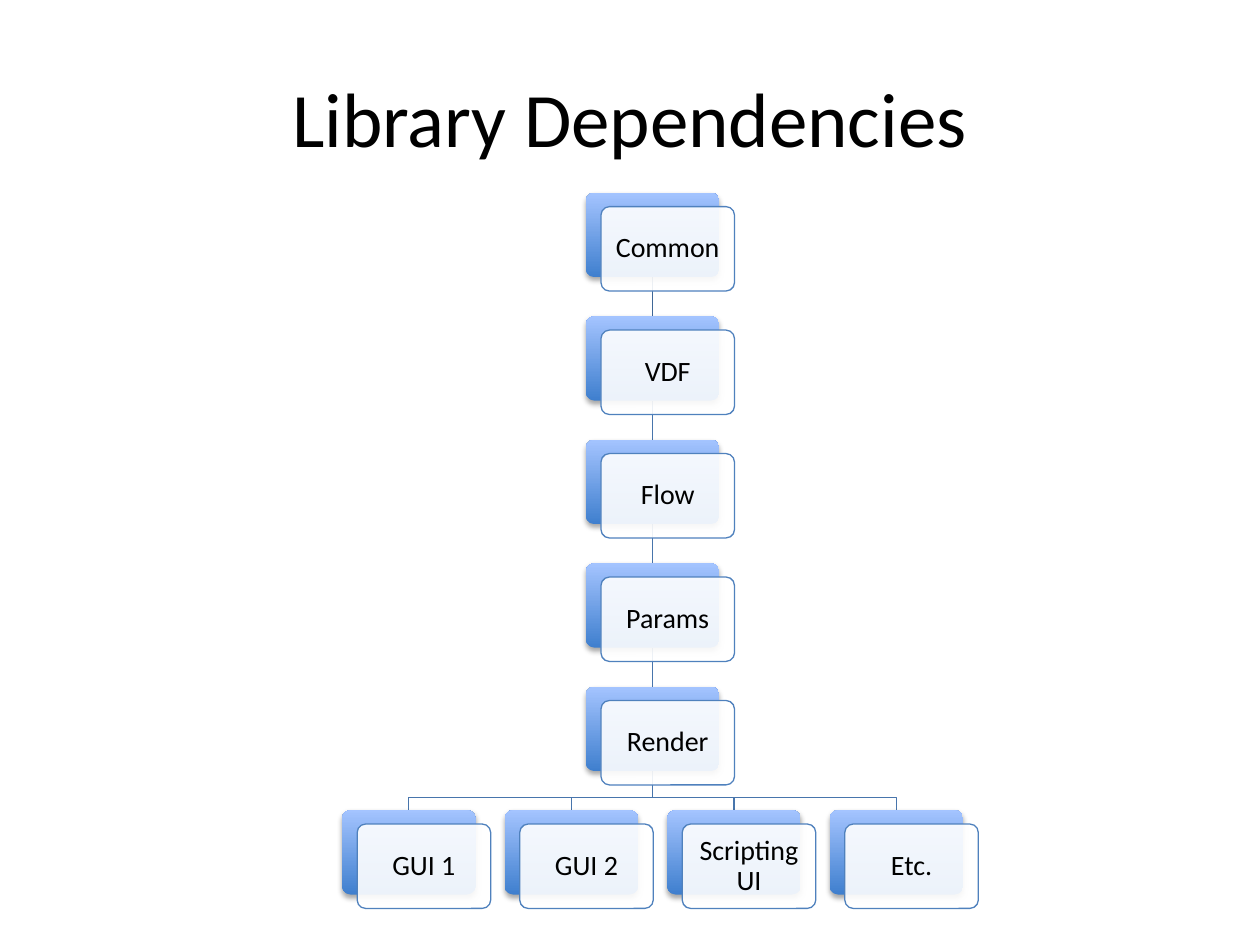
"""Build the library dependency tree slide."""
from lxml.etree import SubElement
from pptx import Presentation
from pptx.dml.color import RGBColor
from pptx.enum.shapes import MSO_CONNECTOR, MSO_SHAPE
from pptx.enum.text import MSO_ANCHOR, PP_ALIGN
from pptx.oxml.ns import qn
from pptx.util import Inches, Pt

CHAIN = ["Common", "VDF", "Flow", "Params", "Render"]
LEAVES = ["GUI 1", "GUI 2", "Scripting UI", "Etc."]
TRUNK_X, TOP = 5.18, 1.53
ROW_PITCH, LEAF_PITCH = 0.98, 1.29
CARD_W, CARD_H = 1.06, 0.67
OFFSET_X, OFFSET_Y = 0.12, 0.11


def color(hex_code):
    return RGBColor.from_string(hex_code)


def apply(target, formats):
    for attribute, value in formats.items():
        setattr(target, attribute, value)


class TreeSlide:
    font = {"name": "Calibri"}
    ink, edge, branch, first_branch = "000000", "4F81BD", "4875AC", "3F6797"
    gradient = ["3F7FCE", "A4C4FF"]
    shadow = {"blurRad": "40000", "dist": "23000", "dir": "5400000", "rotWithShape": "0"}
    line_width = Pt(0.75)

    def __init__(self, slide):
        self.slide = slide

    def label(self, shape, text, size, inset, spacing):
        frame = shape.text_frame
        margins = {f"margin_{side}": Inches(inset) for side in ("left", "top", "right", "bottom")}
        apply(frame, {"word_wrap": True, "vertical_anchor": MSO_ANCHOR.MIDDLE, **margins})
        paragraph = frame.paragraphs[0]
        apply(paragraph, {"text": text, "alignment": PP_ALIGN.CENTER, "line_spacing": spacing})
        apply(paragraph.font, {**self.font, "size": Pt(size)})
        paragraph.font.color.rgb = color(self.ink)

    def outline(self, shape, hex_code):
        shape.line.color.rgb = color(hex_code)
        shape.line.width = self.line_width

    def title(self, text):
        box = self.slide.shapes.add_textbox(*map(Inches, (0.5, 0.3, 9, 1.25)))
        self.label(box, text, 44, 0.1, 1.0)

    def link(self, x, top, bottom, hex_code):
        ends = map(Inches, (x, top, x, bottom))
        connector = self.slide.shapes.add_connector(MSO_CONNECTOR.STRAIGHT, *ends)
        self.outline(connector, hex_code)
        SubElement(connector.element.spPr, qn("a:effectLst"))

    def elbow(self, start_x, end_x, top, bend, bottom):
        builder = self.slide.shapes.build_freeform(Inches(start_x), Inches(top))
        turns = [(start_x, bend), (end_x, bend), (end_x, bottom)]
        builder.add_line_segments([(Inches(x), Inches(y)) for x, y in turns], close=False)
        route = builder.convert_to_shape()
        route.fill.background()
        route.shadow.inherit = False
        self.outline(route, self.branch)

    def panel(self, left, top):
        box = map(Inches, (left, top, CARD_W, CARD_H))
        panel = self.slide.shapes.add_shape(MSO_SHAPE.ROUNDED_RECTANGLE, *box)
        panel.adjustments[0] = 0.1
        panel.shadow.inherit = False
        return panel

    def backing(self, left, top):
        backing = self.panel(left, top)
        backing.fill.gradient()
        backing.fill.gradient_angle = 90
        for stop, hex_code in zip(backing.fill.gradient_stops, self.gradient):
            stop.color.rgb = color(hex_code)
        backing.line.fill.background()
        effects = backing.element.spPr.find(qn("a:effectLst"))
        outer = SubElement(effects, qn("a:outerShdw"), self.shadow)
        tint = SubElement(outer, qn("a:srgbClr"), val="000000")
        SubElement(tint, qn("a:alpha"), val="35000")

    def node(self, text, center, top):
        left = center - CARD_W / 2
        self.backing(left, top)
        card = self.panel(left + OFFSET_X, top + OFFSET_Y)
        card.fill.solid()
        card.fill.fore_color.rgb = color("FFFFFF")
        tint = card.element.spPr.find(f"{qn('a:solidFill')}/{qn('a:srgbClr')}")
        SubElement(tint, qn("a:alpha"), val="90000")
        self.outline(card, self.edge)
        self.label(card, text, 16, 0.07, 0.9)


def main():
    deck = Presentation()
    apply(deck, {"slide_width": Inches(10), "slide_height": Inches(7.5)})
    tree = TreeSlide(deck.slides.add_slide(deck.slide_layouts[6]))
    tree.title("Library Dependencies")

    rows = [TOP + ROW_PITCH * i for i in range(len(CHAIN) + 1)]
    middle = (len(LEAVES) - 1) / 2
    leaf_centers = [TRUNK_X + LEAF_PITCH * (i - middle) for i in range(len(LEAVES))]
    for center in reversed(leaf_centers):
        tree.elbow(TRUNK_X, center, rows[-2] + CARD_H, rows[-1] - 0.1, rows[-1])
    for i in reversed(range(len(CHAIN) - 1)):
        shade = tree.branch if i else tree.first_branch
        tree.link(TRUNK_X, rows[i] + CARD_H, rows[i + 1], shade)

    for library, top in zip(CHAIN, rows):
        tree.node(library, TRUNK_X, top)
    for library, center in zip(LEAVES, leaf_centers):
        tree.node(library, center, rows[-1])
    deck.save("out.pptx")


if __name__ == "__main__":
    main()
